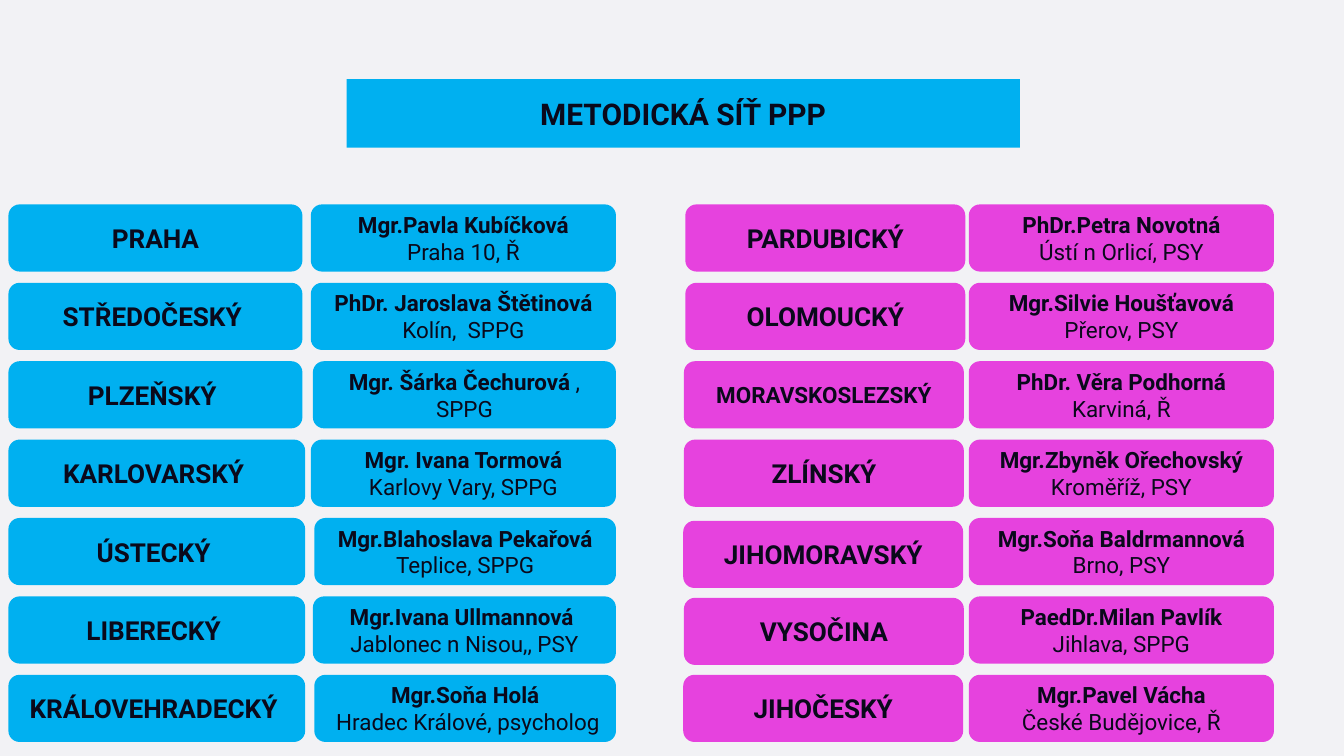
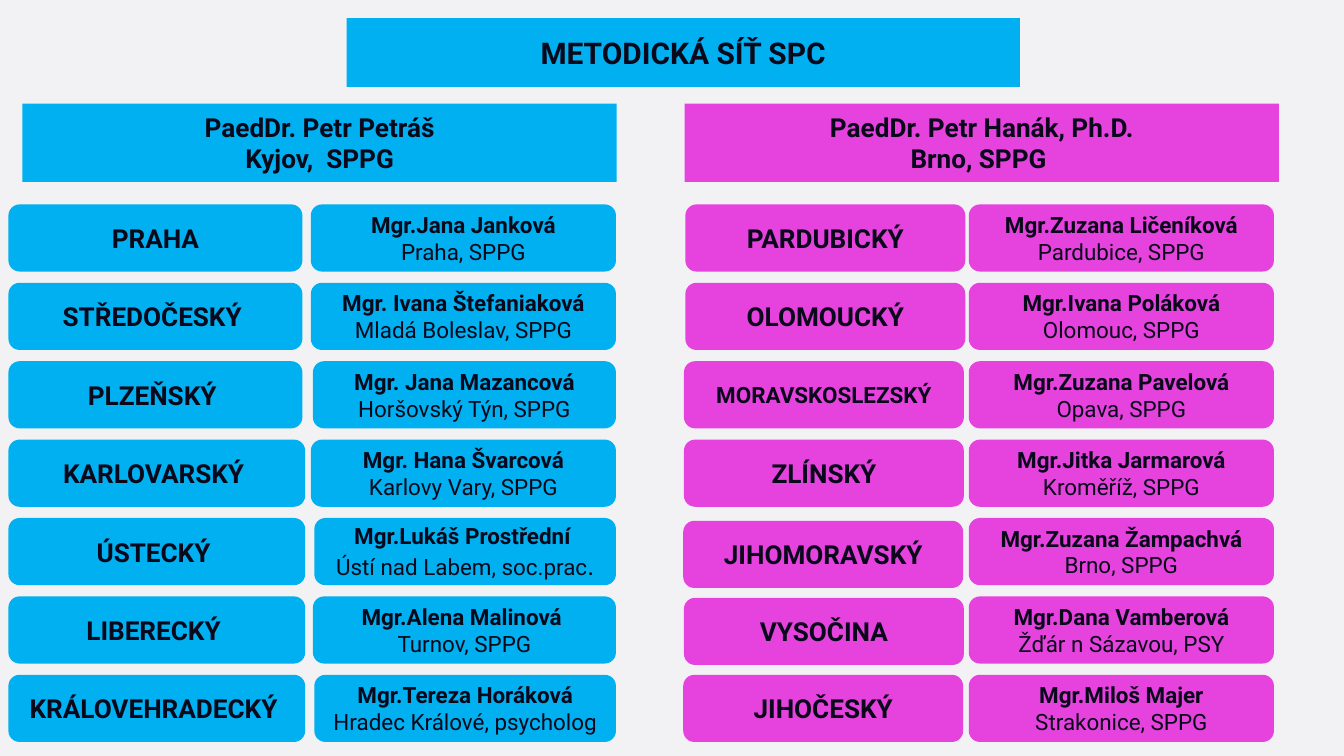
from dataclasses import dataclass

from pptx import Presentation
from pptx.dml.color import RGBColor
from pptx.enum.shapes import MSO_SHAPE
from pptx.enum.text import MSO_ANCHOR, PP_ALIGN
from pptx.shapes.autoshape import Shape
from pptx.slide import Slide
from pptx.util import Emu, Pt

# Shared look
PX = 9525
PAGE_W, PAGE_H = 1920, 1080
FONT = "Roboto"
BACKGROUND, INK = "F2F2F5", "0A091B"
BLUE, PINK = "00B0F0", "E642DE"
RECT, ROUNDED = MSO_SHAPE.RECTANGLE, MSO_SHAPE.ROUNDED_RECTANGLE
MIDDLE, CENTER = MSO_ANCHOR.MIDDLE, PP_ALIGN.CENTER
BLANK_LAYOUT = 6
TITLE_SIZE, REGION_SIZE, CONTACT_SIZE = 32, 28, 24

# Row grid
ROW_TOP, ROW_PITCH, ROW_H = 292, 112, 96
BLUE_RIGHT = 880
REGION_LEFT = 12
PINK_REGION_W = 400
PINK_CONTACT_LEFT, PINK_CONTACT_W = 1384, 436


@dataclass(frozen=True)
class Span:
    text: str
    size: int = CONTACT_SIZE
    bold: bool = True


Paragraphs = list[list[Span]]


@dataclass(frozen=True)
class Region:
    name: str
    left: int
    width: int
    contact_left: int
    contact_width: int
    color: str
    size: int = REGION_SIZE
    drop: int = 0


@dataclass(frozen=True)
class Contact:
    name: str
    place: str
    flowing: bool = False  # the place follows the name in the same paragraph
    ending: str = ""  # closing mark in the larger size

    def paragraphs(self) -> Paragraphs:
        name = [Span(self.name)]
        place = [Span(self.place, bold=False)]
        if self.ending:
            place.append(Span(self.ending, REGION_SIZE, False))
        return [name + place] if self.flowing else [name, place]


@dataclass(frozen=True)
class Leader:
    left: int
    color: str
    name: str
    place: str


@dataclass(frozen=True)
class Network:
    title: str
    title_top: int
    leaders: list[Leader]
    blue_contacts: list[Contact]
    pink_contacts: list[Contact]


def blue_region(name: str, width: int, contact_left: int) -> Region:
    return Region(name, REGION_LEFT, width, contact_left,
                  BLUE_RIGHT - contact_left, BLUE)


def pink_region(name: str, left: int, size: int = REGION_SIZE, drop: int = 0) -> Region:
    return Region(name, left, PINK_REGION_W, PINK_CONTACT_LEFT,
                  PINK_CONTACT_W, PINK, size, drop)


BLUE_REGIONS = [
    blue_region("PRAHA", 420, 444),
    blue_region("STŘEDOČESKÝ ", 420, 444),
    blue_region("PLZEŇSKÝ ", 420, 447),
    blue_region("KARLOVARSKÝ ", 424, 444),
    blue_region("ÚSTECKÝ ", 424, 449),
    blue_region("LIBERECKÝ ", 424, 447),
    blue_region("KRÁLOVEHRADECKÝ ", 424, 449),
]
PINK_REGIONS = [
    pink_region("PARDUBICKÝ", 979),
    pink_region("OLOMOUCKÝ", 979),
    pink_region("MORAVSKOSLEZSKÝ", 977, size=24),
    pink_region("ZLÍNSKÝ", 977),
    pink_region("JIHOMORAVSKÝ", 976, drop=4),
    pink_region("VYSOČINA", 977, drop=2),
    pink_region("JIHOČESKÝ", 976),
]

NETWORKS = [
    Network(
        "METODICKÁ SÍŤ PPP", 113, [],
        [
            Contact("Mgr.Pavla Kubíčková", "Praha 10, Ř"),
            Contact("PhDr. Jaroslava Štětinová ", "Kolín,  SPPG", flowing=True),
            Contact("Mgr. Šárka Čechurová ", ", SPPG", flowing=True),
            Contact("Mgr. Ivana Tormová", "Karlovy Vary, SPPG"),
            Contact("Mgr.Blahoslava Pekařová", "Teplice, SPPG"),
            Contact("Mgr.Ivana Ullmannová ", "Jablonec n Nisou,, PSY"),
            Contact("Mgr.Soňa Holá", " Hradec Králové, psycholog"),
        ],
        [
            Contact("PhDr.Petra Novotná", "Ústí n Orlicí, PSY"),
            Contact("Mgr.Silvie Houšťavová", "Přerov, PSY"),
            Contact("PhDr. Věra Podhorná", "Karviná, Ř"),
            Contact("Mgr.Zbyněk Ořechovský", "Kroměříž, PSY"),
            Contact("Mgr.Soňa Baldrmannová", "Brno, PSY"),
            Contact("PaedDr.Milan Pavlík", "Jihlava, SPPG"),
            Contact("Mgr.Pavel Vácha", "České Budějovice, Ř"),
        ],
    ),
    Network(
        "METODICKÁ SÍŤ SPC", 26,
        [
            Leader(32, BLUE, "PaedDr. Petr Petráš", "Kyjov,  SPPG"),
            Leader(978, PINK, "PaedDr. Petr Hanák, Ph.D.", "Brno, SPPG "),
        ],
        [
            Contact("Mgr.Jana Janková", "Praha, SPPG"),
            Contact("Mgr. Ivana Štefaniaková ", "Mladá Boleslav, SPPG", flowing=True),
            Contact("Mgr. Jana Mazancová ", "Horšovský Týn, SPPG", flowing=True),
            Contact("Mgr. Hana Švarcová", "Karlovy Vary, SPPG"),
            Contact("Mgr.Lukáš Prostřední ", "Ústí nad Labem, soc.prac", ending="."),
            Contact("Mgr.Alena Malinová ", "Turnov, SPPG"),
            Contact("Mgr.Tereza Horáková ", "Hradec Králové, psycholog", flowing=True),
        ],
        [
            Contact("Mgr.Zuzana Ličeníková", "Pardubice, SPPG"),
            Contact("Mgr.Ivana Poláková", "Olomouc, SPPG"),
            Contact("Mgr.Zuzana Pavelová", "Opava, SPPG"),
            Contact("Mgr.Jitka Jarmarová", "Kroměříž, SPPG"),
            Contact("Mgr.Zuzana Žampachvá", "Brno, SPPG"),
            Contact("Mgr.Dana Vamberová", "Žďár n Sázavou, PSY"),
            Contact("Mgr.Miloš Majer", "Strakonice, SPPG"),
        ],
    ),
]


def rgb(color: str) -> RGBColor:
    return RGBColor.from_string(color)


def write(box: Shape, paragraphs: Paragraphs, *, color: str = INK, font: str = FONT) -> None:
    frame = box.text_frame
    frame.word_wrap = True
    frame.vertical_anchor = MIDDLE
    for index, spans in enumerate(paragraphs):
        para = frame.add_paragraph() if index else frame.paragraphs[0]
        para.alignment = CENTER
        for span in spans:
            run = para.add_run()
            run.text = span.text
            run.font.name = font
            run.font.size = Pt(span.size)
            run.font.bold = span.bold
            run.font.color.rgb = rgb(color)


def add_box(page: Slide, left: int, top: int, width: int, height: int, color: str,
            paragraphs: Paragraphs, kind: MSO_SHAPE = ROUNDED) -> Shape:
    box = page.shapes.add_shape(kind, *(Emu(n * PX) for n in (left, top, width, height)))
    box.shadow.inherit = False
    box.fill.solid()
    box.fill.fore_color.rgb = rgb(color)
    box.line.fill.background()
    write(box, paragraphs)
    return box


def add_rows(page: Slide, regions: list[Region], contacts: list[Contact]) -> None:
    for row, (region, contact) in enumerate(zip(regions, contacts)):
        top = ROW_TOP + row * ROW_PITCH
        add_box(page, region.left, top + region.drop, region.width, ROW_H,
                region.color, [[Span(region.name, region.size)]])
        add_box(page, region.contact_left, top, region.contact_width, ROW_H,
                region.color, contact.paragraphs())


def add_network(page: Slide, network: Network) -> None:
    page.background.fill.solid()
    page.background.fill.fore_color.rgb = rgb(BACKGROUND)

    # Leaders of both halves
    for leader in network.leaders:
        lines = [[Span(text, REGION_SIZE)] for text in (leader.name, leader.place)]
        add_box(page, leader.left, 148, 849, 112, leader.color, lines, RECT)

    # Regions with their contacts
    add_rows(page, BLUE_REGIONS, network.blue_contacts)
    add_rows(page, PINK_REGIONS, network.pink_contacts)

    # Title band
    title = add_box(page, 495, network.title_top, 962, 98, BLUE,
                    [[Span(network.title, TITLE_SIZE)]])
    title.adjustments[0] = 0


def main() -> None:
    deck = Presentation()
    deck.slide_width = Emu(PAGE_W * PX)
    deck.slide_height = Emu(PAGE_H * PX)
    for network in NETWORKS:
        add_network(deck.slides.add_slide(deck.slide_layouts[BLANK_LAYOUT]), network)
    deck.save("out.pptx")


if __name__ == "__main__":
    main()
